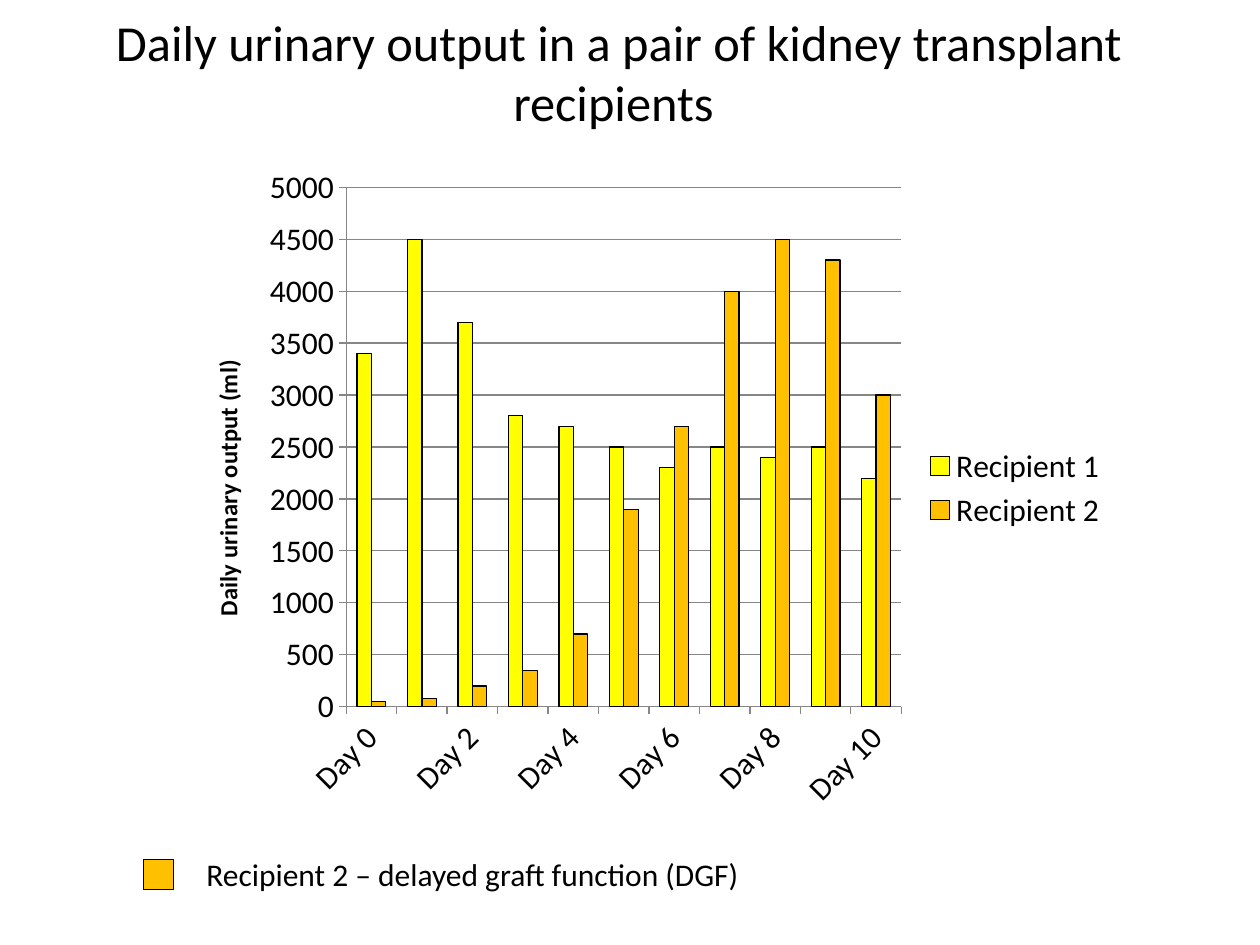
from dataclasses import dataclass

from pptx import Presentation
from pptx.chart.data import CategoryChartData
from pptx.dml.color import RGBColor
from pptx.enum import chart as charts, shapes, text
from pptx.util import Inches, Pt


@dataclass(frozen=True)
class Theme:
    """Colours and type sizes of the slide."""
    font: str = "Calibri"
    ink: RGBColor = RGBColor(0, 0, 0)
    grid: RGBColor = RGBColor(0x86, 0x86, 0x86)
    recipient_1: RGBColor = RGBColor(0xFF, 0xFF, 0)
    recipient_2: RGBColor = RGBColor(0xFF, 0xC0, 0)
    title: Pt = Pt(28.8)
    body: Pt = Pt(18)
    axis_title: Pt = Pt(14)


THEME = Theme()
DAYS = [f"Day {day}" for day in range(11)]
OUTPUTS = [
    ("Recipient 1", THEME.recipient_1,
     [3400, 4500, 3700, 2800, 2700, 2500, 2300, 2500, 2400, 2500, 2200]),
    ("Recipient 2", THEME.recipient_2,
     [50, 75, 200, 350, 700, 1900, 2700, 4000, 4500, 4300, 3000]),
]


def style_font(font, size, bold=False):
    """Apply the theme typeface and ink to a font."""
    font.name, font.size, font.bold = THEME.font, size, bold
    font.color.rgb = THEME.ink


def style_bar(bar_format, color, line_width):
    """Fill a bar or swatch and outline it in ink."""
    bar_format.fill.solid()
    bar_format.fill.fore_color.rgb = color
    bar_format.line.color.rgb = THEME.ink
    bar_format.line.width = line_width


def add_text(slide, box, words, size, alignment, anchor):
    """Place one wrapped paragraph in the box."""
    frame = slide.shapes.add_textbox(*box).text_frame
    frame.word_wrap = True
    frame.vertical_anchor = anchor
    paragraph = frame.paragraphs[0]
    paragraph.text = words
    paragraph.alignment = alignment
    style_font(paragraph.font, size)


def add_output_chart(slide, box):
    """Place the clustered columns of daily output in the box."""
    data = CategoryChartData()
    data.categories = DAYS
    for name, _, values in OUTPUTS:
        data.add_series(name, values)
    chart = slide.shapes.add_chart(
        charts.XL_CHART_TYPE.COLUMN_CLUSTERED, *box, data).chart
    style_font(chart.font, THEME.body)
    chart.has_title = False
    chart.has_legend = True
    chart.legend.position = charts.XL_LEGEND_POSITION.RIGHT
    chart.legend.include_in_layout = False

    plot = chart.plots[0]
    plot.gap_width = 150
    plot.vary_by_categories = False
    for series, (_, color, _) in zip(plot.series, OUTPUTS):
        style_bar(series.format, color, Pt(0.75))

    value_axis = chart.value_axis
    value_axis.minimum_scale, value_axis.maximum_scale = 0, 5000
    value_axis.major_unit = 500
    value_axis.has_major_gridlines = True
    title_frame = value_axis.axis_title.text_frame
    title_frame.text = "Daily urinary output (ml)"
    style_font(title_frame.paragraphs[0].font, THEME.axis_title, bold=True)
    for axis in (chart.category_axis, value_axis):
        axis.major_tick_mark = charts.XL_TICK_MARK.OUTSIDE
        axis.format.line.color.rgb = THEME.grid
    value_axis.major_gridlines.format.line.color.rgb = THEME.grid


def add_graft_note(slide, left, top, width, height):
    """Place the swatch and the note beside it in the box."""
    side, indent = Inches(0.24), Inches(0.4)
    swatch = slide.shapes.add_shape(
        shapes.MSO_SHAPE.RECTANGLE, left, top + (height - side) // 2, side, side)
    swatch.shadow.inherit = False
    style_bar(swatch, THEME.recipient_2, Pt(0.5))
    add_text(slide, (left + indent, top, width - indent, height),
             "Recipient 2 – delayed graft function (DGF)", THEME.body,
             text.PP_ALIGN.LEFT, text.MSO_ANCHOR.TOP)


def main():
    """Build and save the slide."""
    presentation = Presentation()
    presentation.slide_width, presentation.slide_height = Inches(10), Inches(7.5)
    slide = presentation.slides.add_slide(presentation.slide_layouts[6])
    add_text(slide, (Inches(0.43), Inches(0.13), Inches(8.97), Inches(0.87)),
             "Daily urinary output in a pair of kidney transplant recipients ",
             THEME.title, text.PP_ALIGN.CENTER, text.MSO_ANCHOR.MIDDLE)
    add_output_chart(slide, (Inches(1.46), Inches(1.23), Inches(7.43), Inches(5.29)))
    add_graft_note(slide, Inches(1.14), Inches(6.74), Inches(8.43), Inches(0.4))
    presentation.save("out.pptx")


if __name__ == "__main__":
    main()
